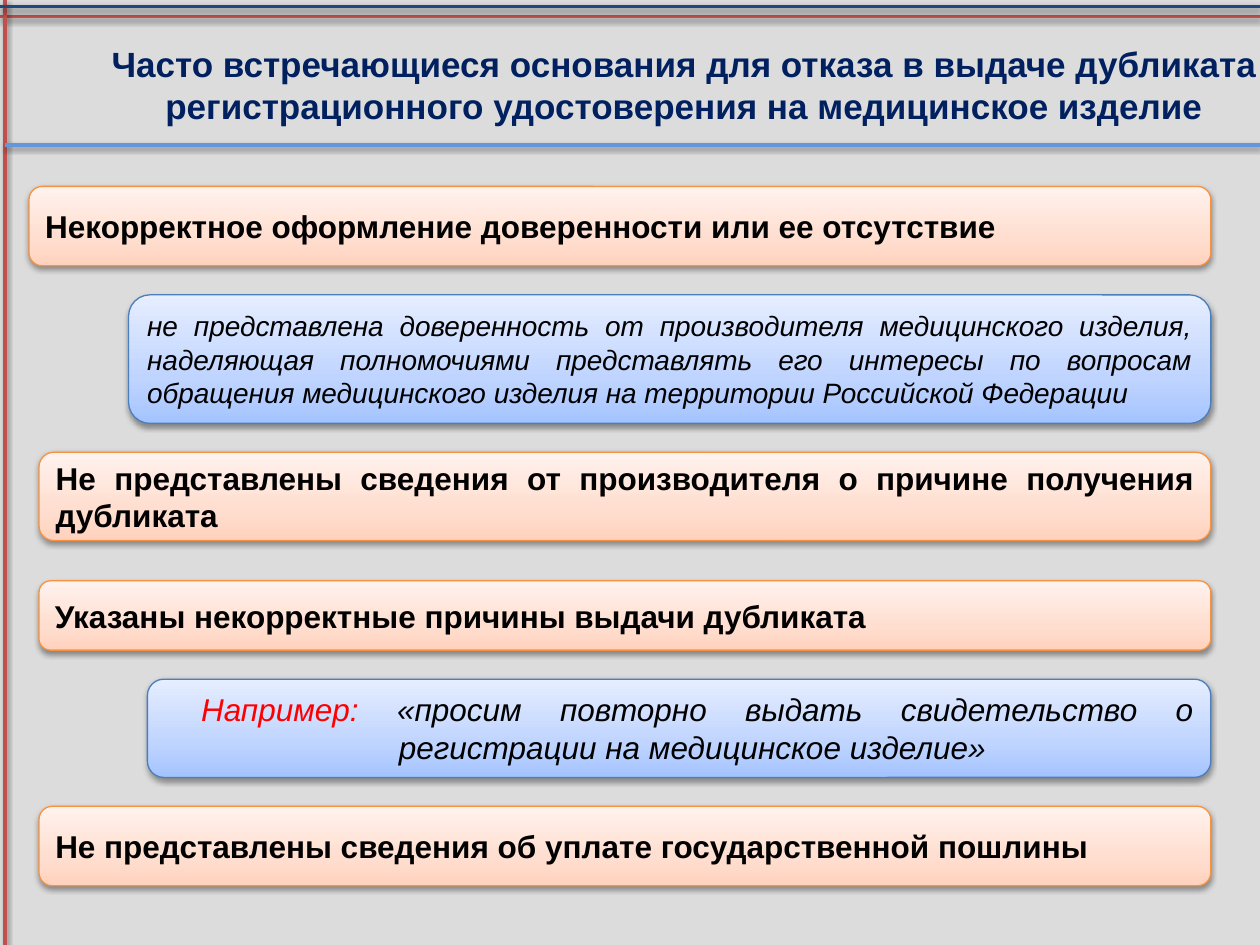
import copy
import pptx
import pptx.dml.color
import pptx.enum.shapes
import pptx.enum.text
import pptx.oxml
import pptx.oxml.ns
import pptx.util

WIDTH, HEIGHT = 10, 7.5
FONT = "Arial"
TITLE = "Часто встречающиеся основания для отказа в выдаче дубликата регистрационного удостоверения на медицинское изделие"
RULES = [
    ((WIDTH, 0.13), (0, 0.13), "C0504D"),
    ((0.04, 0), (0.04, HEIGHT), "C0504D"),
    ((0, 0.05), (WIDTH, 0.05), "1F497D"),
    ((0.04, 1.15), (WIDTH, 1.15), "6497DA"),
]
REASON = {"stops": [(0, "FFD2BD"), (0.35, "FFDED0"), (1, "FFF2ED")], "line": "F69240", "bold": True, "italic": False}
DETAIL = {"stops": [(0, "A4C4FF"), (0.35, "BFD4FF"), (1, "E6EEFF")], "line": "4B7EBC", "bold": False, "italic": True}
BLACK, RED = "000000", "FF0000"
TOP, RIGHT, GAP = 1.48, 9.61, 0.23
CARDS = [
    {"style": REASON, "left": 0.23, "height": 0.63, "size": 18,
     "runs": [("Некорректное оформление доверенности или ее отсутствие", BLACK)]},
    {"style": DETAIL, "left": 1.02, "height": 1.02, "size": 16,
     "runs": [("не представлена доверенность от производителя медицинского изделия, наделяющая полномочиями представлять его интересы по вопросам обращения медицинского изделия на территории Российской Федерации", BLACK)]},
    {"style": REASON, "left": 0.31, "height": 0.7, "size": 18, "extra_gap": 0.09,
     "runs": [("Не представлены сведения от производителя о причине получения дубликата", BLACK)]},
    {"style": REASON, "left": 0.31, "height": 0.55, "size": 18,
     "runs": [("Указаны некорректные причины выдачи дубликата", BLACK)]},
    {"style": DETAIL, "left": 1.17, "height": 0.78, "size": 18, "indent": (1.86, -1.57),
     "runs": [("Например:", RED), (" «просим повторно выдать свидетельство о регистрации на медицинское изделие»", BLACK)]},
    {"style": REASON, "left": 0.31, "height": 0.63, "size": 18,
     "runs": [("Не представлены сведения об уплате государственной пошлины", BLACK)]},
]
SHADOW = (
    f'<a:effectLst {pptx.oxml.ns.nsdecls("a")}>'
    '<a:outerShdw blurRad="40000" dist="20000" dir="5400000" rotWithShape="0">'
    '<a:srgbClr val="000000"><a:alpha val="38000"/></a:srgbClr>'
    '</a:outerShdw></a:effectLst>'
)


def rgb(value):
    return pptx.dml.color.RGBColor.from_string(value)


def inches(*values):
    return [pptx.util.Inches(value) for value in values]


def style_outline(shape, color, width):
    shape.line.color.rgb = rgb(color)
    shape.line.width = pptx.util.Pt(width)
    shape._element.spPr.append(pptx.oxml.parse_xml(SHADOW))


def style_run(run, size, color, bold, italic):
    font = run.font
    font.name, font.size = FONT, pptx.util.Pt(size)
    font.bold, font.italic = bold, italic
    font.color.rgb = rgb(color)


def fill_gradient(shape, stops):
    shape.fill.gradient()
    shape.fill.gradient_angle = 90
    stop_list = shape._element.spPr.find(".//" + pptx.oxml.ns.qn("a:gsLst"))
    stop_list.append(copy.deepcopy(stop_list[-1]))
    for stop, (position, color) in zip(shape.fill.gradient_stops, stops):
        stop.position = position
        stop.color.rgb = rgb(color)


def add_rule(slide, start, end, color):
    connector = slide.shapes.add_connector(
        pptx.enum.shapes.MSO_CONNECTOR.STRAIGHT, *inches(*start, *end))
    style_outline(connector, color, 2)


def set_title(slide):
    title = slide.shapes.title
    title.left, title.top, title.width, title.height = inches(0.78, 0.16, 9.3, 1.02)
    frame = title.text_frame
    frame.text = TITLE
    frame.word_wrap = True
    frame.auto_size = pptx.enum.text.MSO_AUTO_SIZE.NONE
    frame.vertical_anchor = pptx.enum.text.MSO_ANCHOR.MIDDLE
    paragraph = frame.paragraphs[0]
    paragraph.alignment = pptx.enum.text.PP_ALIGN.CENTER
    style_run(paragraph.runs[0], 20, "002060", True, False)


def add_card(slide, card, top):
    style = card["style"]
    shape = slide.shapes.add_shape(
        pptx.enum.shapes.MSO_SHAPE.ROUNDED_RECTANGLE,
        *inches(card["left"], top, RIGHT - card["left"], card["height"]))
    fill_gradient(shape, style["stops"])
    style_outline(shape, style["line"], 0.75)
    frame = shape.text_frame
    frame.word_wrap = True
    frame.vertical_anchor = pptx.enum.text.MSO_ANCHOR.MIDDLE
    paragraph = frame.paragraphs[0]
    paragraph.alignment = pptx.enum.text.PP_ALIGN.JUSTIFY
    if "indent" in card:
        margin, indent = inches(*card["indent"])
        properties = paragraph._p.get_or_add_pPr()
        properties.set("marL", str(margin))
        properties.set("indent", str(indent))
    for text, color in card["runs"]:
        run = paragraph.add_run()
        run.text = text
        style_run(run, card["size"], color, style["bold"], style["italic"])


def main():
    presentation = pptx.Presentation()
    presentation.slide_width, presentation.slide_height = inches(WIDTH, HEIGHT)
    slide = presentation.slides.add_slide(presentation.slide_layouts[5])
    slide.background.fill.solid()
    slide.background.fill.fore_color.rgb = rgb("DCDCDC")
    for rule in RULES:
        add_rule(slide, *rule)
    set_title(slide)
    top = TOP
    for card in CARDS:
        add_card(slide, card, top)
        top += card["height"] + GAP + card.get("extra_gap", 0)
    presentation.save("out.pptx")


if __name__ == "__main__":
    main()
